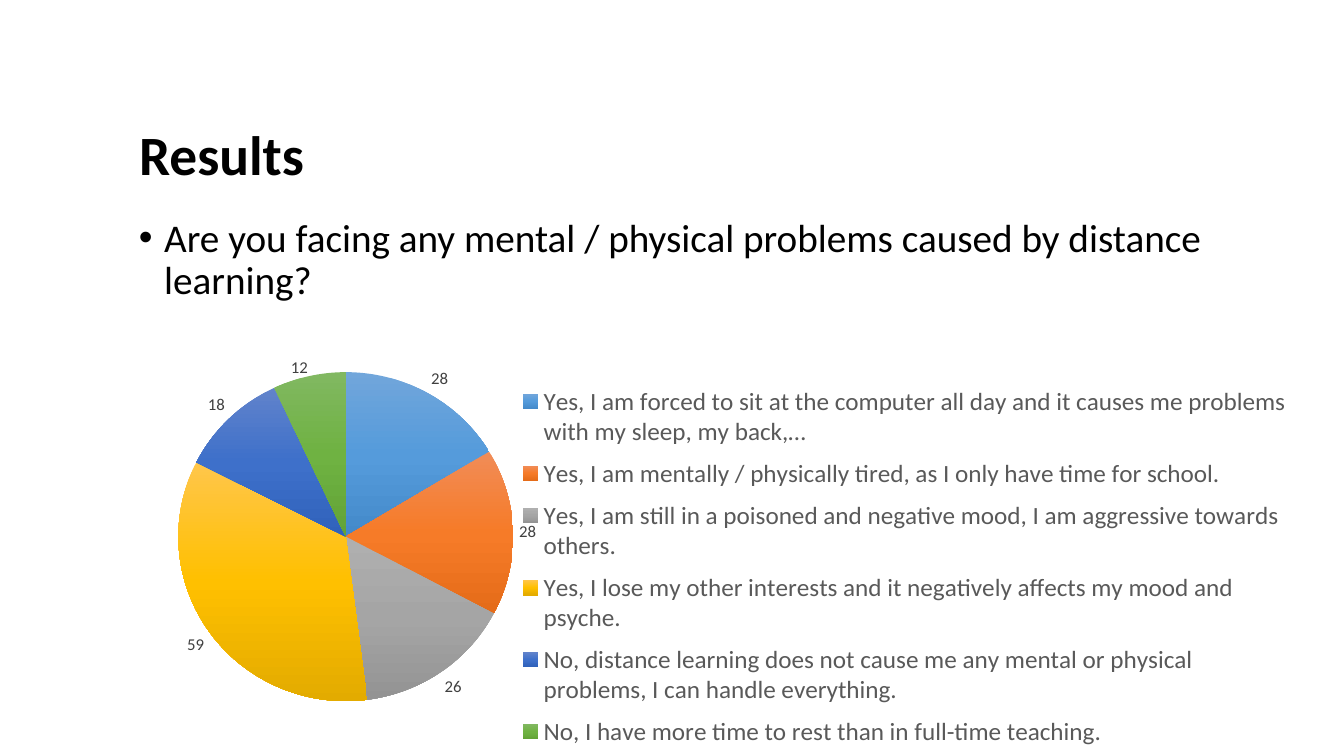
from copy import deepcopy

from lxml import etree
from pptx import Presentation
from pptx.chart.data import CategoryChartData
from pptx.dml.color import RGBColor
from pptx.enum.chart import XL_CHART_TYPE, XL_LABEL_POSITION, XL_LEGEND_POSITION
from pptx.enum.text import MSO_ANCHOR, MSO_AUTO_SIZE, PP_ALIGN
from pptx.oxml.ns import qn
from pptx.util import Cm, Pt

PIE = XL_CHART_TYPE.PIE
OUTSIDE = XL_LABEL_POSITION.OUTSIDE_END
RIGHT = XL_LEGEND_POSITION.RIGHT
LEFT = PP_ALIGN.LEFT
MIDDLE = MSO_ANCHOR.MIDDLE
NO_FIT = MSO_AUTO_SIZE.NONE

FONT = "Calibri"
COLORS = {"text": "000000", "legend": "595959", "label": "404040"}

# Answer, number of votes, gradient from top to bottom
ANSWERS = [
    ("Yes, I am forced to sit at the computer all day and it causes me problems "
     "with my sleep, my back,…", 28, ("71A6DB", "559BDB", "448ACA")),
    ("Yes, I am mentally / physically tired, as I only have time for school.",
     28, ("F18C57", "F67B28", "E56C19")),
    ("Yes, I am still in a poisoned and negative mood, I am aggressive towards "
     "others.", 26, ("AFAFAF", "A5A5A5", "939393")),
    ("Yes, I lose my other interests and it negatively affects my mood and "
     "psyche.", 59, ("FFC64B", "FFC000", "E3AB00")),
    ("No, distance learning does not cause me any mental or physical problems, "
     "I can handle everything.", 18, ("6183CB", "3E70CA", "3062BB")),
    ("No, I have more time to rest than in full-time teaching.",
     12, ("81B861", "6FB242", "62A336")),
]


def style_font(font, size, color, bold=False):
    font.name = FONT
    font.size = Pt(size)
    font.bold = bold
    font.color.rgb = RGBColor.from_string(color)


def write_text(tf, text, size, color=COLORS["text"], bold=False, bullet=False):
    tf.word_wrap = True
    tf.auto_size = NO_FIT
    p = tf.paragraphs[0]
    p.alignment = LEFT
    p.line_spacing = 0.9
    if bullet:
        pPr = p._p.get_or_add_pPr()
        pPr.set("marL", str(Cm(0.64)))
        pPr.set("indent", str(-Cm(0.64)))
        etree.SubElement(pPr, qn("a:buFont")).set("typeface", "Arial")
        etree.SubElement(pPr, qn("a:buChar")).set("char", "•")
    r = p.add_run()
    r.text = text
    style_font(r.font, size, color, bold)


def set_layout(parent, index, x, y, w, h, inner=False):
    """Place a chart part by fractions of the chart area."""
    for old in parent.findall(qn("c:layout")):
        parent.remove(old)
    layout = etree.Element(qn("c:layout"))
    manual = etree.SubElement(layout, qn("c:manualLayout"))
    settings = [("layoutTarget", "inner")] if inner else []
    settings += [("xMode", "edge"), ("yMode", "edge"),
                 ("x", x), ("y", y), ("w", w), ("h", h)]
    for tag, value in settings:
        etree.SubElement(manual, qn(f"c:{tag}")).set("val", str(value))
    parent.insert(index, layout)


def fill_slice(series, index, colors):
    fmt = series.points[index].format
    fmt.line.fill.background()
    fmt.fill.gradient()
    fmt.fill.gradient_angle = 270
    stops = list(series._element.iter(qn("a:gsLst")))[-1]
    stops.append(deepcopy(stops[0]))
    for stop, position, color in zip(fmt.fill.gradient_stops, (0, 0.5, 1), colors):
        stop.position = position
        stop.color.rgb = RGBColor.from_string(color)


def add_pie(slide, left, top, width, height):
    data = CategoryChartData()
    data.categories = [answer for answer, _, _ in ANSWERS]
    data.add_series("Series 1", [votes for _, votes, _ in ANSWERS])
    chart = slide.shapes.add_chart(PIE, left, top, width, height, data).chart
    chart.has_title = False
    style_font(chart.font, 10, COLORS["text"])

    # Slices and their values
    plot = chart.plots[0]
    plot.vary_by_categories = True
    for i, (_, _, colors) in enumerate(ANSWERS):
        fill_slice(plot.series[0], i, colors)
    plot.has_data_labels = True
    labels = plot.data_labels
    labels.show_value = True
    labels.show_percentage = False
    labels.position = OUTSIDE
    style_font(labels.font, 12, COLORS["label"])

    # Legend
    chart.has_legend = True
    legend = chart.legend
    legend.position = RIGHT
    legend.include_in_layout = False
    style_font(legend.font, 18, COLORS["legend"])

    plot_area = chart._chartSpace.find(".//" + qn("c:plotArea"))
    set_layout(plot_area, 0, 0.042, 0.035, 0.285, 0.812, inner=True)
    set_layout(legend._element, 1, 0.33, 0.04, 0.66, 0.95)


def main():
    prs = Presentation()
    prs.slide_width, prs.slide_height = Cm(33.87), Cm(19.05)
    slide = prs.slides.add_slide(prs.slide_layouts[5])
    left = Cm(3.25)

    # Title
    title = slide.shapes.title
    title.left, title.top, title.width, title.height = left, Cm(3.05), Cm(29.2), Cm(1.85)
    title.text_frame.vertical_anchor = MIDDLE
    write_text(title.text_frame, "Results", 39.6, bold=True)

    # Survey question
    question = slide.shapes.add_textbox(left, Cm(5.38), Cm(30.2), Cm(2.8))
    write_text(question.text_frame,
               "Are you facing any mental / physical problems caused by distance learning?",
               28, bullet=True)

    # Answers
    add_pie(slide, left, Cm(8.84), Cm(29.62), Cm(10.39))
    prs.save("out.pptx")


if __name__ == "__main__":
    main()
